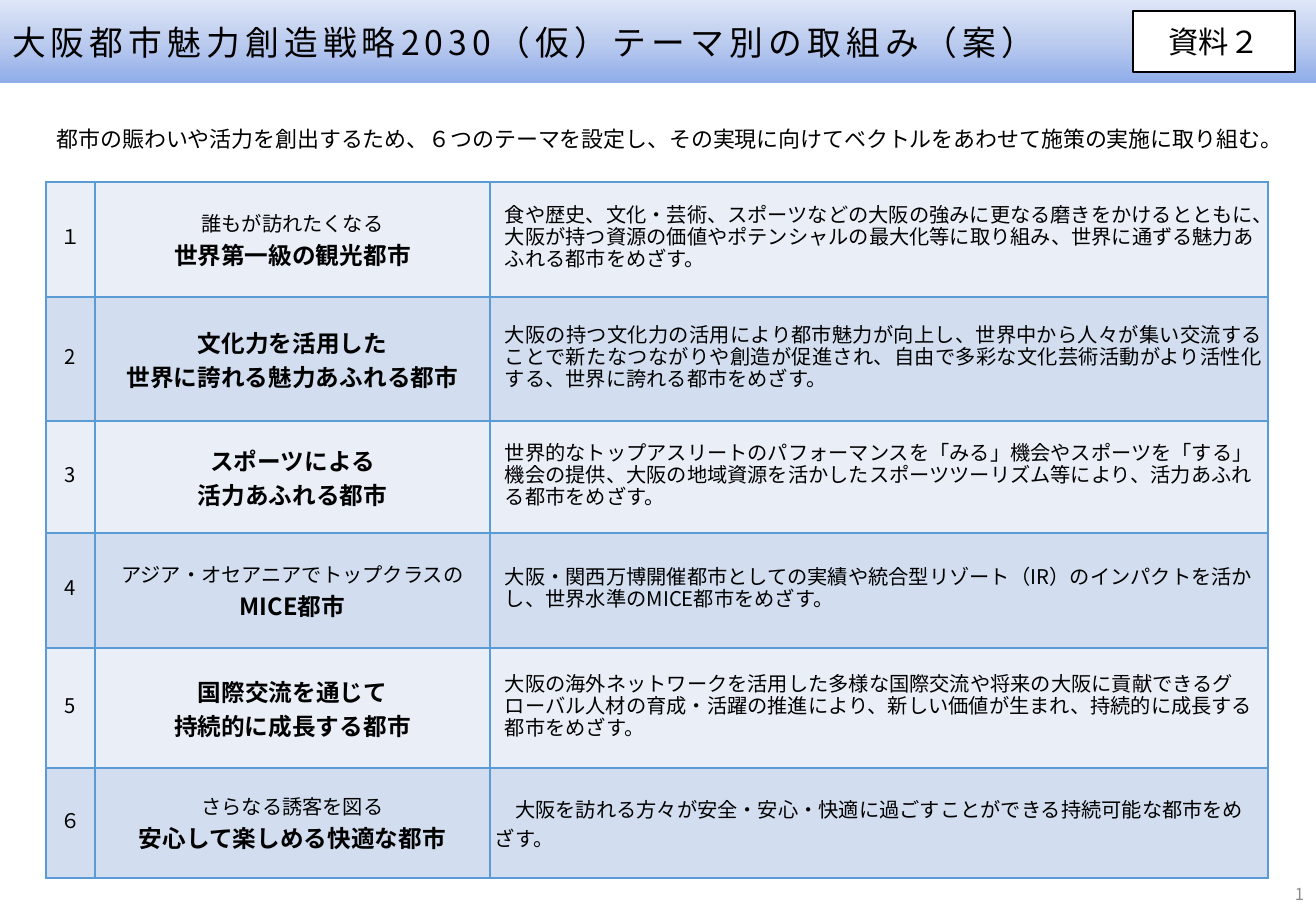
from copy import deepcopy
from dataclasses import dataclass

from lxml import etree
from pptx import Presentation
from pptx.dml.color import RGBColor
from pptx.enum.lang import MSO_LANGUAGE_ID
from pptx.enum.shapes import MSO_SHAPE
from pptx.enum.text import MSO_ANCHOR, MSO_AUTO_SIZE, PP_ALIGN
from pptx.oxml.ns import qn
from pptx.util import Emu, Pt

LEFT, CENTER, RIGHT, JUSTIFY = PP_ALIGN.LEFT, PP_ALIGN.CENTER, PP_ALIGN.RIGHT, PP_ALIGN.JUSTIFY
MIDDLE = MSO_ANCHOR.MIDDLE
JAPANESE = MSO_LANGUAGE_ID.JAPANESE
RECTANGLE = MSO_SHAPE.RECTANGLE
NO_AUTOFIT = MSO_AUTO_SIZE.NONE
TITLE_ONLY = 5

TITLE = "大阪都市魅力創造戦略2030（仮）テーマ別の取組み（案）"
LABEL = "資料２"
INTRO = ("　", "都市の賑わいや活力を創出するため、６つのテーマを設定し、その実現に向けてベクトルをあわせて施策の実施に取り組む。")
PAGE_NUMBER = "1"

# number, lines of the theme as (text, bold), aim, alignment of the aim
THEMES = [
    ("１", [("誰もが訪れたくなる", False), ("世界第一級の観光都市", True)],
     "食や歴史、文化・芸術、スポーツなどの大阪の強みに更なる磨きをかけるとともに、"
     "大阪が持つ資源の価値やポテンシャルの最大化等に取り組み、世界に通ずる魅力あふれる都市をめざす。", LEFT),
    ("2", [("文化力を活用した", True), ("世界に誇れる魅力あふれる都市", True)],
     "大阪の持つ文化力の活用により都市魅力が向上し、世界中から人々が集い交流することで新たなつながりや"
     "創造が促進され、自由で多彩な文化芸術活動がより活性化する、世界に誇れる都市をめざす。", JUSTIFY),
    ("3", [("スポーツによる", True), ("活力あふれる都市", True)],
     "世界的なトップアスリートのパフォーマンスを「みる」機会やスポーツを「する」機会の提供、"
     "大阪の地域資源を活かしたスポーツツーリズム等により、活力あふれる都市をめざす。", LEFT),
    ("4", [("アジア・オセアニアでトップクラスの", False), ("MICE都市", True)],
     "大阪・関西万博開催都市としての実績や統合型リゾート（IR）のインパクトを活かし、"
     "世界水準のMICE都市をめざす。", LEFT),
    ("5", [("国際交流を通じて", True), ("持続的に成長する都市", True)],
     "大阪の海外ネットワークを活用した多様な国際交流や将来の大阪に貢献できるグローバル人材の育成・"
     "活躍の推進により、新しい価値が生まれ、持続的に成長する都市をめざす。", LEFT),
    ("６", [("さらなる誘客を図る", False), ("安心して楽しめる快適な都市", True)],
     "　大阪を訪れる方々が安全・安心・快適に過ごすことができる持続可能な都市をめざす。", LEFT),
]

# Lengths in px
SLIDE_SIZE = (1316, 911)
TITLE_BOX = (0, 0, 1316, 83)
LABEL_BOX = (1133, 11, 162, 61)
INTRO_BOX = (21, 96, 1273, 84)
PAGE_BOX = (1020, 870, 296, 48)
TABLE_ORIGIN = (46, 182)
COLUMN_WIDTHS = (49, 395, 778)
ROW_HEIGHTS = (115, 124, 112, 115, 120, 110)
CELL_INSET = 5
AIM_INDENT = 10


@dataclass(frozen=True)
class Theme:
    font: str = "Noto Sans CJK JP"
    text: str = "000000"
    muted: str = "8C8C8C"
    paper: str = "FFFFFF"
    border: str = "5B9BD5"
    bands: tuple = ("EAEFF7", "D2DEEF")
    gradient: tuple = ("8FADE9", "BCCCEF", "DEE6F7")
    title_size: float = 20
    label_size: float = 18
    strong_size: float = 14
    intro_size: float = 13
    body_size: float = 12
    page_size: float = 9.8
    line_spacing: float = 13


THEME = Theme()


def px(length):
    return Emu(round(length * 914400 / 121.5))


def box(lengths):
    return [px(length) for length in lengths]


def color(value):
    return RGBColor.from_string(value)


def add_run(paragraph, text, size, bold=False, fill=THEME.text):
    run = paragraph.add_run()
    run.text = text
    font = run.font
    font.name, font.size, font.bold = THEME.font, Pt(size), bold
    font.color.rgb = color(fill)
    font.language_id = JAPANESE
    properties = run._r.get_or_add_rPr()
    etree.SubElement(properties, qn("a:ea"), typeface=THEME.font)
    return run


def first_paragraph(shape, align):
    """Prepare a shape's text frame and return its first paragraph."""
    frame = shape.text_frame
    frame.word_wrap, frame.auto_size = True, NO_AUTOFIT
    frame.vertical_anchor = MIDDLE
    paragraph = frame.paragraphs[0]
    paragraph.alignment = align
    return paragraph


def add_title(slide):
    title = slide.shapes.title
    title.left, title.top, title.width, title.height = box(TITLE_BOX)
    title.fill.gradient()
    title.fill.gradient_angle = 90
    stops = title._element.spPr.find(".//" + qn("a:gsLst"))
    stops.insert(1, deepcopy(stops[0]))
    for index, (stop, value) in enumerate(zip(title.fill.gradient_stops, THEME.gradient)):
        stop.position = index / 2
        stop.color.rgb = color(value)
    run = add_run(first_paragraph(title, LEFT), TITLE, THEME.title_size)
    run._r.get_or_add_rPr().set("spc", "300")


def add_label(slide):
    label = slide.shapes.add_shape(RECTANGLE, *box(LABEL_BOX))
    label.shadow.inherit = False
    label.fill.solid()
    label.fill.fore_color.rgb = color(THEME.paper)
    label.line.color.rgb = color(THEME.text)
    label.line.width = Pt(1)
    add_run(first_paragraph(label, CENTER), LABEL, THEME.label_size)


def style_cell(cell, band):
    cell.vertical_anchor = MIDDLE
    cell.margin_left = cell.margin_right = px(CELL_INSET)
    cell.margin_top = cell.margin_bottom = 0
    properties = cell._tc.get_or_add_tcPr()
    for side in ("a:lnL", "a:lnR", "a:lnT", "a:lnB"):
        line = etree.SubElement(properties, qn(side), w=str(Pt(1)))
        fill = etree.SubElement(line, qn("a:solidFill"))
        etree.SubElement(fill, qn("a:srgbClr"), val=THEME.border)
    cell.fill.solid()
    cell.fill.fore_color.rgb = color(band)


def fill_cell(cell, lines, align, line_spacing=None):
    frame = cell.text_frame
    for index, (text, bold) in enumerate(lines):
        paragraph = frame.add_paragraph() if index else frame.paragraphs[0]
        paragraph.alignment = align
        paragraph.line_spacing = line_spacing
        add_run(paragraph, text, THEME.strong_size if bold else THEME.body_size, bold)


def add_theme_table(slide):
    size = (sum(COLUMN_WIDTHS), sum(ROW_HEIGHTS))
    table = slide.shapes.add_table(len(THEMES), len(COLUMN_WIDTHS), *box(TABLE_ORIGIN + size)).table
    table.first_row = table.horz_banding = False
    for column, width in zip(table.columns, COLUMN_WIDTHS):
        column.width = px(width)
    for index, (number, lines, aim, aim_align) in enumerate(THEMES):
        row = table.rows[index]
        row.height = px(ROW_HEIGHTS[index])
        for cell in row.cells:
            style_cell(cell, THEME.bands[index % 2])
        number_cell, name_cell, aim_cell = row.cells
        fill_cell(number_cell, [(number, False)], CENTER, Pt(THEME.line_spacing))
        fill_cell(name_cell, lines, CENTER)
        if aim.startswith("　"):
            fill_cell(aim_cell, [(aim, False)], aim_align)
        else:
            fill_cell(aim_cell, [(aim, False)], aim_align, Pt(THEME.line_spacing))
            properties = aim_cell.text_frame.paragraphs[0]._p.get_or_add_pPr()
            properties.set("marL", str(px(AIM_INDENT)))
            properties.set("indent", "0")


def main():
    presentation = Presentation()
    presentation.slide_width, presentation.slide_height = box(SLIDE_SIZE)
    slide = presentation.slides.add_slide(presentation.slide_layouts[TITLE_ONLY])
    add_title(slide)
    add_label(slide)
    intro = first_paragraph(slide.shapes.add_textbox(*box(INTRO_BOX)), LEFT)
    for text, size in zip(INTRO, (THEME.strong_size, THEME.intro_size)):
        add_run(intro, text, size)
    add_theme_table(slide)
    page = first_paragraph(slide.shapes.add_textbox(*box(PAGE_BOX)), RIGHT)
    add_run(page, PAGE_NUMBER, THEME.page_size, fill=THEME.muted)
    presentation.save("out.pptx")


if __name__ == "__main__":
    main()
